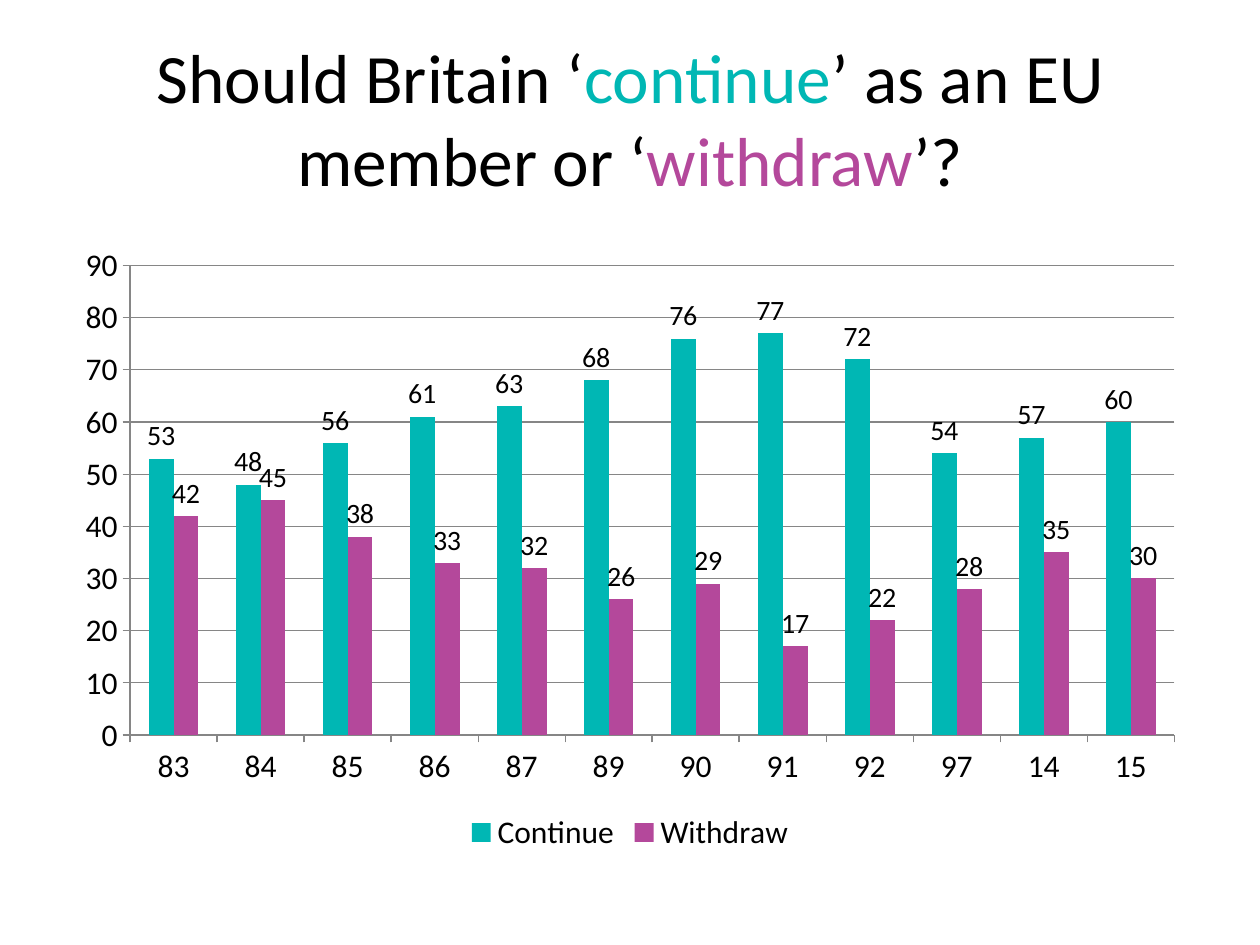
from pptx import Presentation
from pptx.chart.data import CategoryChartData
from pptx.dml.color import RGBColor
from pptx.enum.chart import XL_CHART_TYPE, XL_LABEL_POSITION, XL_LEGEND_POSITION, XL_TICK_MARK
from pptx.enum.text import MSO_ANCHOR, MSO_AUTO_SIZE, PP_ALIGN
from pptx.util import Pt

COLUMN = XL_CHART_TYPE.COLUMN_CLUSTERED
ABOVE = XL_LABEL_POSITION.OUTSIDE_END
BOTTOM = XL_LEGEND_POSITION.BOTTOM
OUT = XL_TICK_MARK.OUTSIDE
MIDDLE = MSO_ANCHOR.MIDDLE
FIXED = MSO_AUTO_SIZE.NONE
CENTER = PP_ALIGN.CENTER

PX = 914400 / 126
TEAL, PURPLE, BLACK, GREY = "00B7B4", "B4489B", "000000", "868686"

YEARS = ["83", "84", "85", "86", "87", "89", "90", "91", "92", "97", "14", "15"]
POLLS = [
    ("Continue", TEAL, [53, 48, 56, 61, 63, 68, 76, 77, 72, 54, 57, 60]),
    ("Withdraw", PURPLE, [42, 45, 38, 33, 32, 26, 29, 17, 22, 28, 35, 30]),
]
TITLE = [
    ("Should Britain ‘", BLACK),
    ("continue", TEAL),
    ("’ as an EU member or ‘", BLACK),
    ("withdraw", PURPLE),
    ("’?", BLACK),
]


def px(*sizes):
    return [round(size * PX) for size in sizes]


def rgb(code):
    return RGBColor.from_string(code)


def style(font, size, color=BLACK, face="Calibri"):
    font.name, font.size = face, Pt(size)
    font.color.rgb = rgb(color)


def write(para, text, **form):
    run = para.add_run()
    run.text = text
    style(run.font, **form)


def rule(line):
    line.color.rgb = rgb(GREY)
    line.width = Pt(0.75)


class Page:
    def __init__(self, deck):
        self.slide = deck.slides.add_slide(deck.slide_layouts[5])

    def title(self, parts, box, size):
        shape = self.slide.shapes.title
        shape.left, shape.top, shape.width, shape.height = px(*box)
        frame = shape.text_frame
        frame.word_wrap, frame.auto_size = True, FIXED
        frame.vertical_anchor = MIDDLE
        para = frame.paragraphs[0]
        para.alignment = CENTER
        for text, color in parts:
            write(para, text, size=size, color=color)

    def columns(self, cats, rows, box, size, label):
        data = CategoryChartData()
        data.categories = cats
        for name, _, vals in rows:
            data.add_series(name, vals)
        chart = self.slide.shapes.add_chart(COLUMN, *px(*box), data).chart
        chart.has_title = False
        style(chart.font, size)
        chart.has_legend = True
        chart.legend.position = BOTTOM
        chart.legend.include_in_layout = False

        for axis in (chart.category_axis, chart.value_axis):
            axis.major_tick_mark = OUT
            rule(axis.format.line)
        scale = chart.value_axis
        scale.minimum_scale, scale.maximum_scale, scale.major_unit = 0, 90, 10
        scale.has_major_gridlines = True
        rule(scale.major_gridlines.format.line)

        plot = chart.plots[0]
        plot.gap_width, plot.overlap = 150, 0
        plot.vary_by_categories = False
        for series, (_, color, _) in zip(plot.series, rows):
            series.format.fill.solid()
            series.format.fill.fore_color.rgb = rgb(color)
            series.invert_if_negative = False
            labels = series.data_labels
            labels.show_value, labels.position = True, ABOVE
            style(labels.font, label)


def main():
    deck = Presentation()
    deck.slide_width, deck.slide_height = px(1260, 945)
    page = Page(deck)
    page.title(TITLE, (63, 38, 1134, 158), size=39.6)
    page.columns(YEARS, POLLS, (63, 234, 1134, 624), size=18, label=16)
    deck.save("out.pptx")


if __name__ == "__main__":
    main()
